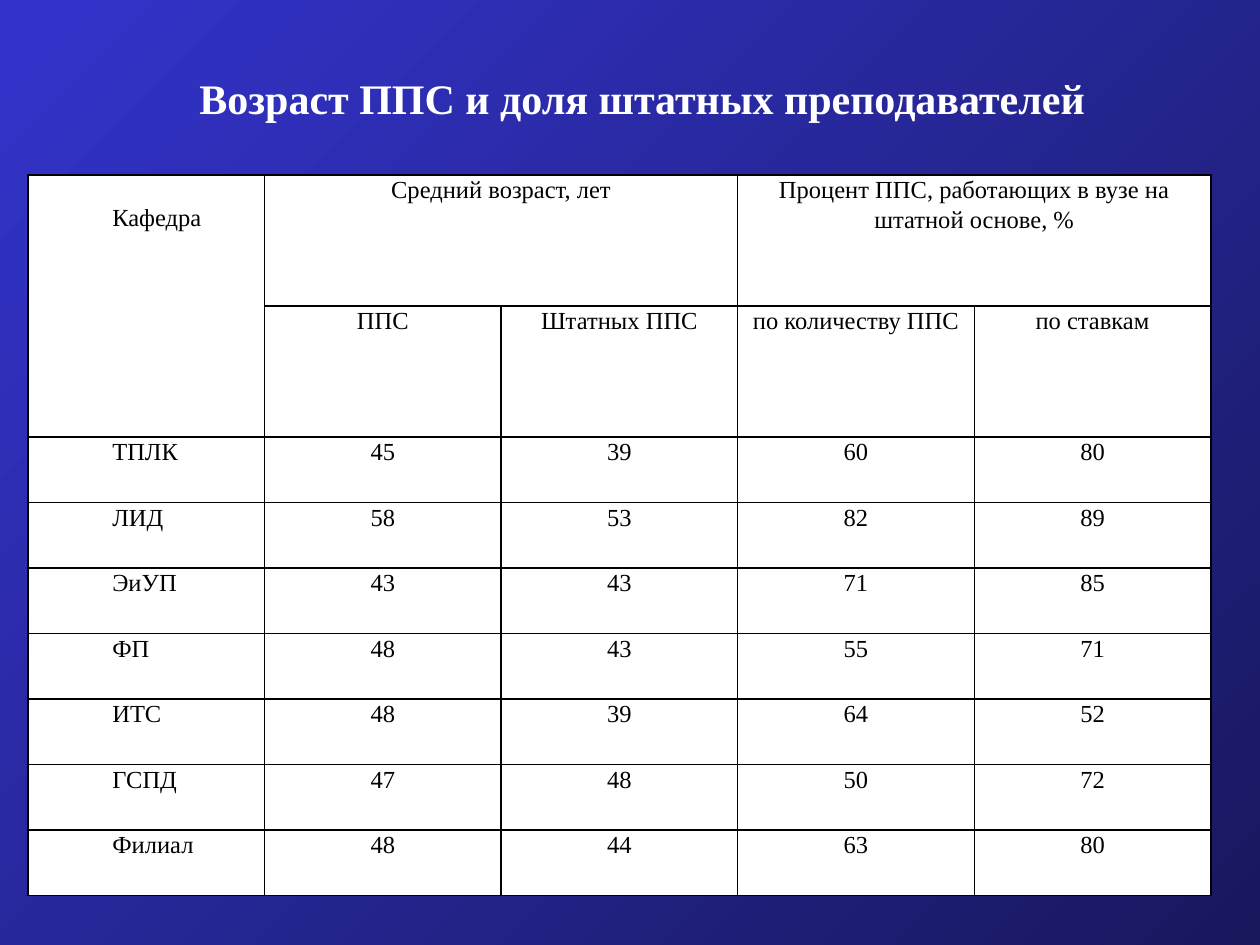
from dataclasses import dataclass

from lxml import etree
from pptx import Presentation
from pptx import util as u
from pptx.dml.color import RGBColor
from pptx.enum import text
from pptx.oxml import ns


@dataclass(frozen=True)
class Theme:
    font: str = "Times New Roman"
    title_size: int = 24
    table_size: int = 14
    title_color: str = "FFFFFF"
    ink: str = "000000"
    cell_fill: str = "FFFFFF"
    gradient: tuple = ("3333CC", "18185E")


class SlideBuilder:
    """Draws styled elements on the current slide, with lengths in points."""

    def __init__(self, page, theme):
        self.page = page
        self.theme = theme

    def background(self):
        fill = self.page.background.fill
        fill.gradient()
        fill.gradient_angle = 315
        for stop, color in zip(fill.gradient_stops, self.theme.gradient):
            stop.color.rgb = RGBColor.from_string(color)

    def style(self, para, size, color, bold=False):
        para.font.name = self.theme.font
        para.font.size = u.Pt(size)
        para.font.bold = bold
        para.font.color.rgb = RGBColor.from_string(color)

    def title(self, words, left, top, width, height):
        box = self.page.shapes.add_textbox(*map(u.Pt, (left, top, width, height)))
        frame = box.text_frame
        frame.word_wrap = True
        frame.auto_size = text.MSO_AUTO_SIZE.SHAPE_TO_FIT_TEXT
        para = frame.paragraphs[0]
        para.text = words
        para.alignment = text.PP_ALIGN.CENTER
        self.style(para, self.theme.title_size, self.theme.title_color, bold=True)

    def border(self, cell, width=1):
        properties = cell._tc.get_or_add_tcPr()
        for side in ("a:lnL", "a:lnR", "a:lnT", "a:lnB"):
            line = etree.SubElement(properties, ns.qn(side), w=str(u.Pt(width)))
            fill = etree.SubElement(line, ns.qn("a:solidFill"))
            etree.SubElement(fill, ns.qn("a:srgbClr"), val=self.theme.ink)

    def cell(self, cell, words, is_label):
        self.border(cell)
        cell.fill.solid()
        cell.fill.fore_color.rgb = RGBColor.from_string(self.theme.cell_fill)
        cell.margin_left = cell.margin_right = u.Pt(5)
        cell.margin_top = cell.margin_bottom = 0
        para = cell.text_frame.paragraphs[0]
        para.text = words
        para.line_spacing = 1.08
        para.alignment = text.PP_ALIGN.JUSTIFY if is_label else text.PP_ALIGN.CENTER
        if is_label:
            para._p.get_or_add_pPr().set("indent", str(u.Pt(43.2)))
        self.style(para, self.theme.table_size, self.theme.ink)

    def table(self, rows, merges, left, top, column_width, row_heights):
        columns = len(rows[0])
        size = (left, top, column_width * columns, sum(row_heights))
        frame = self.page.shapes.add_table(len(rows), columns, *map(u.Pt, size))
        table = frame.table
        table.first_row = table.horz_banding = False
        for column in table.columns:
            column.width = u.Pt(column_width)
        for row, height in zip(table.rows, row_heights):
            row.height = u.Pt(height)
        for r, values in enumerate(rows):
            for c, value in enumerate(values):
                self.cell(table.cell(r, c), str(value), c == 0)
        for start, end in merges:
            table.cell(*start).merge(table.cell(*end))
        return table


def main():
    deck = Presentation()
    deck.slide_width, deck.slide_height = u.Pt(720), u.Pt(540)
    page = deck.slides.add_slide(deck.slide_layouts[6])
    builder = SlideBuilder(page, Theme())
    builder.background()

    rows = [
        ("Кафедра", "Средний возраст, лет", "",
         "Процент ППС, работающих в вузе на штатной основе, %", ""),
        ("", "ППС", "Штатных ППС", "по количеству ППС", "по ставкам"),
        ("ТПЛК", 45, 39, 60, 80),
        ("ЛИД", 58, 53, 82, 89),
        ("ЭиУП", 43, 43, 71, 85),
        ("ФП", 48, 43, 55, 71),
        ("ИТС", 48, 39, 64, 52),
        ("ГСПД", 47, 48, 50, 72),
        ("Филиал", 48, 44, 63, 80),
    ]
    merges = [((0, 0), (1, 0)), ((0, 1), (0, 2)), ((0, 3), (0, 4))]
    row_height = 37.44
    heights = [2 * row_height] * 2 + [row_height] * (len(rows) - 2)
    table = builder.table(rows, merges, 16, 100, 135.2, heights)
    table.cell(0, 0).margin_top = u.Pt(15.5)

    builder.title("Возраст ППС и доля штатных преподавателей", 51, 38, 632, 36)
    deck.save("out.pptx")


if __name__ == "__main__":
    main()
